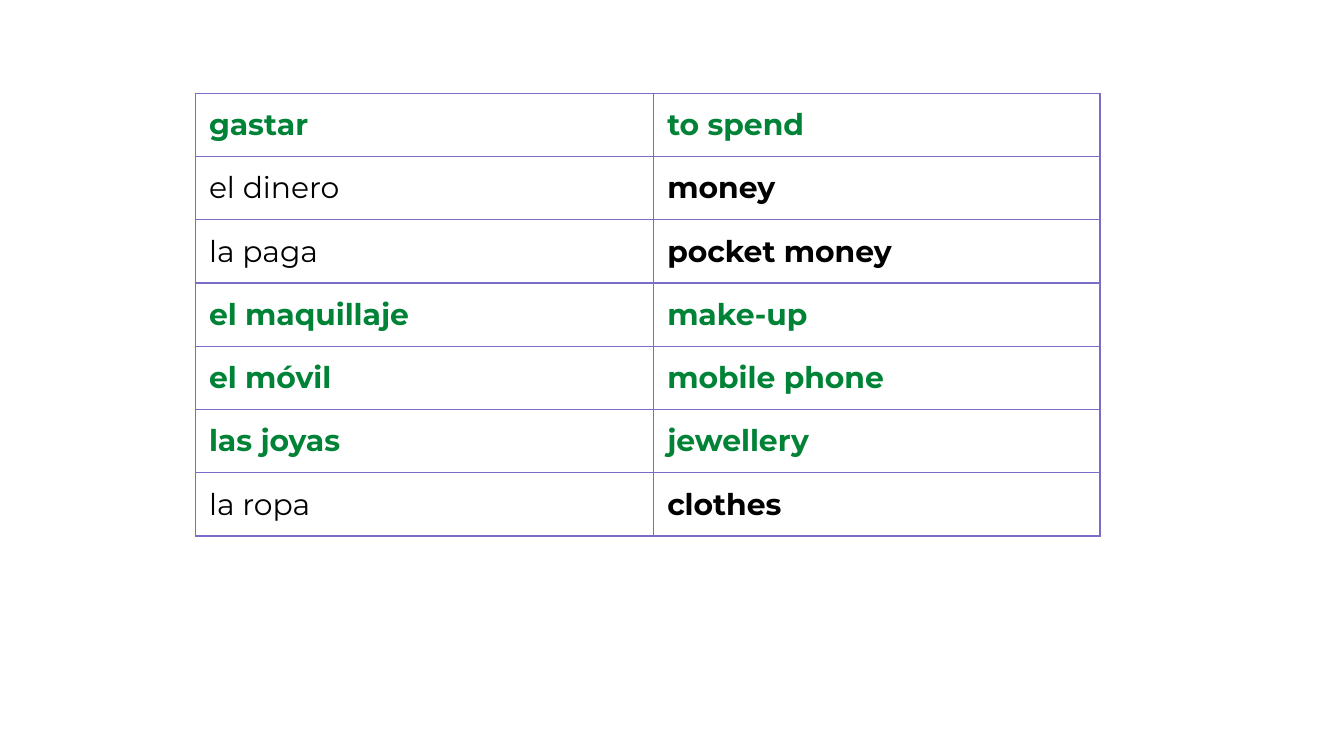
"""Build a slide with a Spanish-English vocabulary table."""
from lxml import etree
from pptx import Presentation
from pptx.dml.color import RGBColor
from pptx.enum.text import MSO_ANCHOR
from pptx.oxml.ns import qn
from pptx.util import Pt

PX = 4572
GREEN, BLACK, PURPLE = "008237", "000000", "786EC8"
COLUMN_WIDTHS = [682, 664]
ROW_HEIGHT = 84
MARGIN = 20
VOCABULARY = [
    ("gastar", "to spend", True),
    ("el dinero", "money", False),
    ("la paga", "pocket money", False),
    ("el maquillaje", "make-up", True),
    ("el móvil", "mobile phone", True),
    ("las joyas", "jewellery", True),
    ("la ropa", "clothes", False),
]


def write_cell(cell, text, *, color, bold, size=16, font_name="Montserrat"):
    cell.margin_left = cell.margin_right = MARGIN * PX
    cell.margin_top = cell.margin_bottom = MARGIN * PX
    cell.vertical_anchor = MSO_ANCHOR.TOP
    run = cell.text_frame.paragraphs[0].add_run()
    run.text = text
    run.font.name = font_name
    run.font.size = Pt(size)
    run.font.bold = bold
    run.font.color.rgb = RGBColor.from_string(color)


def add_borders(cell, color, width):
    properties = cell._tc.get_or_add_tcPr()
    for side in ("a:lnL", "a:lnR", "a:lnT", "a:lnB"):
        line = etree.SubElement(properties, qn(side), w=str(Pt(width)))
        fill = etree.SubElement(line, qn("a:solidFill"))
        etree.SubElement(fill, qn("a:srgbClr"), val=color)


presentation = Presentation()
presentation.slide_width = 2000 * PX
presentation.slide_height = 1125 * PX
slide = presentation.slides.add_slide(presentation.slide_layouts[6])

table = slide.shapes.add_table(
    len(VOCABULARY), len(COLUMN_WIDTHS), 291 * PX, 139 * PX,
    sum(COLUMN_WIDTHS) * PX, len(VOCABULARY) * ROW_HEIGHT * PX,
).table
table.first_row = table.horz_banding = False
for column, width in zip(table.columns, COLUMN_WIDTHS):
    column.width = width * PX

for row, (spanish, english, highlighted) in zip(table.rows, VOCABULARY):
    row.height = ROW_HEIGHT * PX
    color = GREEN if highlighted else BLACK
    write_cell(row.cells[0], spanish, color=color, bold=highlighted)
    write_cell(row.cells[1], english, color=color, bold=True)
    for cell in row.cells:
        add_borders(cell, PURPLE, 0.75)
        cell.fill.background()

presentation.save("out.pptx")
